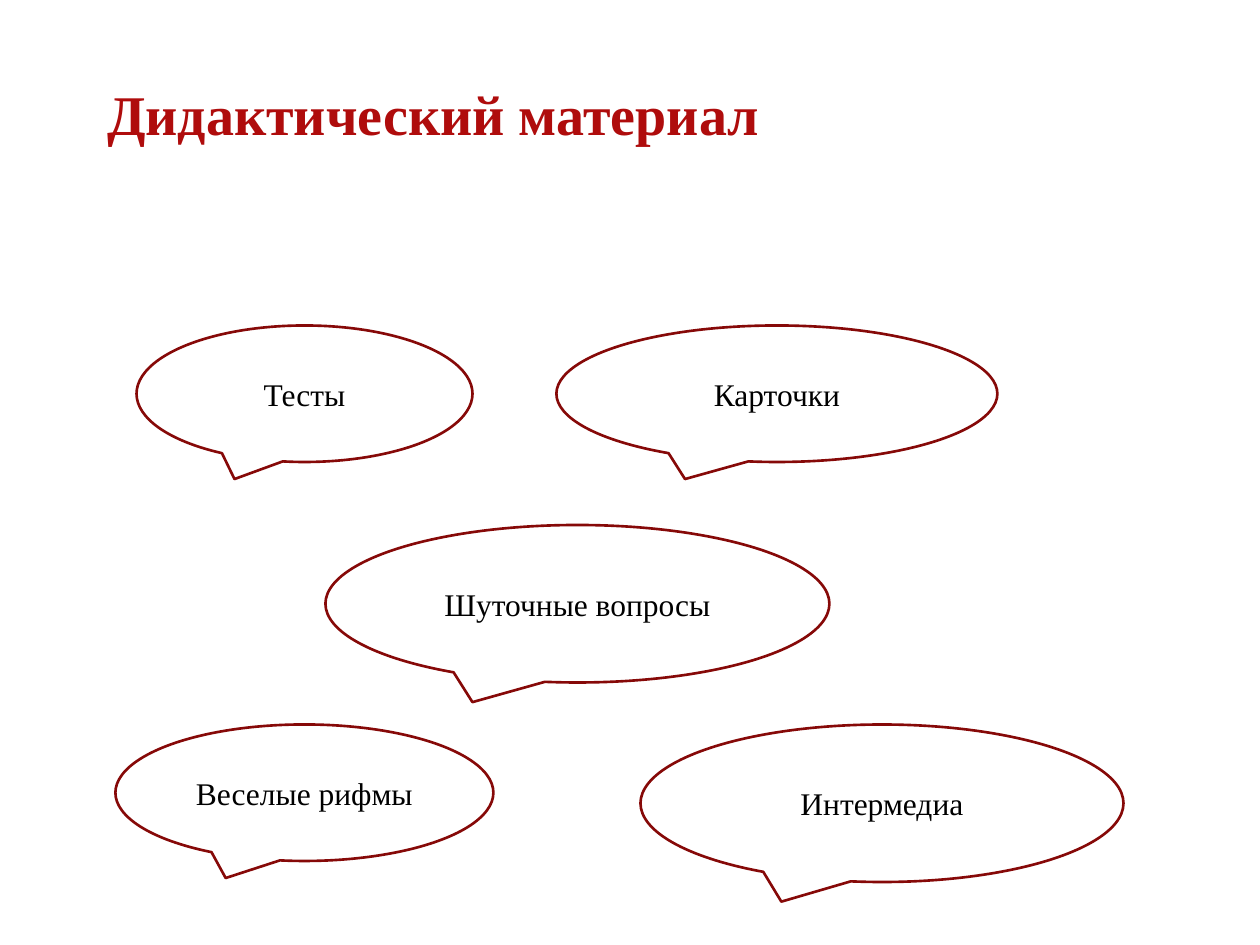
from dataclasses import dataclass

from lxml.etree import SubElement
from pptx import Presentation
from pptx.dml.color import RGBColor
from pptx.enum.shapes import MSO_SHAPE
from pptx.enum.text import MSO_ANCHOR, MSO_AUTO_SIZE, PP_ALIGN
from pptx.oxml.ns import qn
from pptx.util import Inches, Pt

CELL = Inches(1) // 12  # the grid has 120 columns and 90 rows
COLUMNS, ROWS = 120, 90
FONT = "Times New Roman"


@dataclass
class Callout:
    text: str
    column: int
    row: int
    columns: int
    rows: int


CALLOUTS = [
    Callout("Тесты", 13, 31, 32, 13),
    Callout("Шуточные вопросы", 31, 50, 48, 15),
    Callout("Карточки", 53, 31, 42, 13),
    Callout("Интермедиа", 61, 69, 46, 15),
    Callout("Веселые рифмы", 11, 69, 36, 13),
]


def color(value: str) -> RGBColor:
    return RGBColor.from_string(value)


def apply(target, values: dict) -> None:
    for name, value in values.items():
        setattr(target, name, value)


def write(shape, text: str, frame_format: dict, alignment, font_format: dict, font_color: str):
    frame = shape.text_frame
    apply(frame, {"word_wrap": True, "auto_size": MSO_AUTO_SIZE.NONE, **frame_format})
    paragraph = frame.paragraphs[0]
    paragraph.alignment = alignment
    run = paragraph.add_run()
    run.text = text
    apply(run.font, {"name": FONT, **font_format})
    run.font.color.rgb = color(font_color)
    return run


def add_text_shadow(run) -> None:
    properties = run.font._element
    effects = SubElement(properties, qn("a:effectLst"))
    properties.find(qn("a:solidFill")).addnext(effects)
    shadow = SubElement(effects, qn("a:outerShdw"), blurRad="38100", dist="38100",
                        dir="5400000", algn="tl", rotWithShape="0")
    black = SubElement(shadow, qn("a:srgbClr"), val="000000")
    SubElement(black, qn("a:alpha"), val="50000")


def add_title(slide, text: str) -> None:
    title = slide.shapes.title
    apply(title, {"left": 9 * CELL, "top": 7 * CELL, "width": 105 * CELL, "height": 28 * CELL})
    run = write(title, text, {"vertical_anchor": MSO_ANCHOR.TOP}, PP_ALIGN.LEFT,
                {"size": Pt(32), "bold": True}, "AF0C0C")
    add_text_shadow(run)


def add_callout(slide, callout: Callout) -> None:
    shape = slide.shapes.add_shape(
        MSO_SHAPE.OVAL_CALLOUT, callout.column * CELL, callout.row * CELL,
        callout.columns * CELL, callout.rows * CELL)
    shape.shadow.inherit = False
    shape.fill.solid()
    shape.fill.fore_color.rgb = color("FFFFFF")
    shape.line.color.rgb = color("860908")
    shape.line.width = Pt(1.5)
    write(shape, callout.text, {"vertical_anchor": MSO_ANCHOR.MIDDLE}, PP_ALIGN.CENTER,
          {"size": Pt(18)}, "000000")


def main() -> None:
    presentation = Presentation()
    apply(presentation, {"slide_width": COLUMNS * CELL, "slide_height": ROWS * CELL})
    slide = presentation.slides.add_slide(presentation.slide_layouts.get_by_name("Title Only"))
    add_title(slide, "Дидактический материал")
    for callout in CALLOUTS:
        add_callout(slide, callout)
    presentation.save("out.pptx")


if __name__ == "__main__":
    main()
